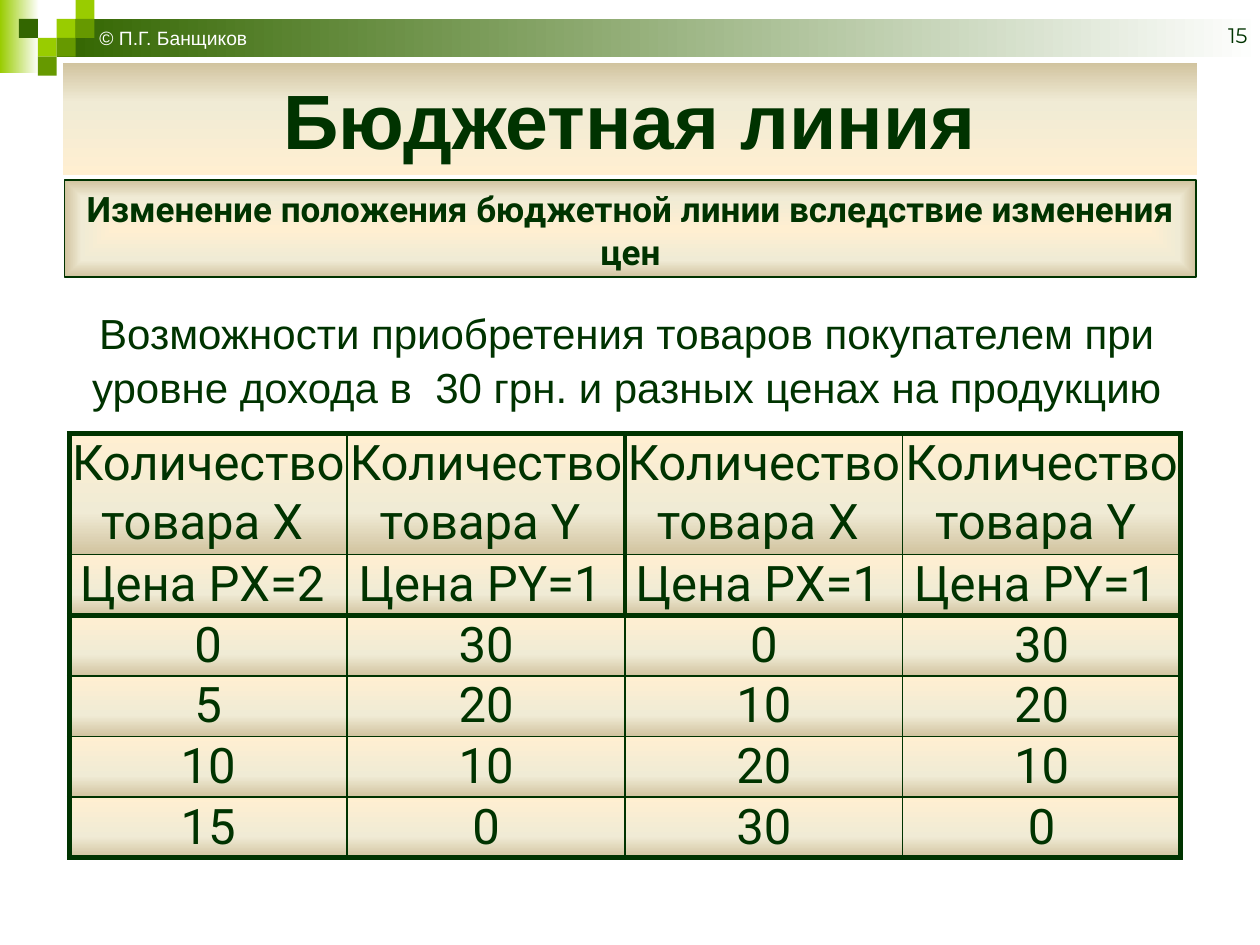
from dataclasses import dataclass, field
from typing import Any, NamedTuple

from lxml import etree
from pptx import Presentation
from pptx.dml.color import RGBColor
from pptx.enum.shapes import MSO_SHAPE
from pptx.enum.text import MSO_ANCHOR, PP_ALIGN
from pptx.oxml.ns import qn
from pptx.util import Pt

RECT = MSO_SHAPE.RECTANGLE
TOP, MID, LOW = MSO_ANCHOR.TOP, MSO_ANCHOR.MIDDLE, MSO_ANCHOR.BOTTOM
LEFT, MIDST, RIGHT = PP_ALIGN.LEFT, PP_ALIGN.CENTER, PP_ALIGN.RIGHT


class Theme:
    ink = "003300"
    white = "FFFFFF"
    lime = "99CC00"
    leaf = "669900"
    moss = "336600"
    sand = ((0, "FFEFD1"), (65, "F0EBD5"), (100, "D1C39F"))
    arial = "Arial"
    robot = "Roboto"
    mont = "Montserrat"
    title = 44
    grid = 28
    body = 24
    sub = 20
    page = 12
    note = 11
    thin = 1
    thick = 3


class Box(NamedTuple):
    left: float
    top: float
    width: float
    height: float

    def size(self) -> list[Pt]:
        return [Pt(v) for v in self]


class Grad(NamedTuple):
    stops: tuple
    angle: int | None = None


@dataclass
class Block:
    box: Box
    fill: Any
    line: bool = False


@dataclass
class Label:
    text: str
    size: float
    face: str = Theme.arial
    color: str = Theme.ink
    bold: bool = False
    align: Any = MIDST
    lead: float = 1
    frame: dict = field(default_factory=dict)


BARE = {f"margin_{s}": 0 for s in ("left", "right", "top", "bottom")}
TILE = 10.8
TILES = (
    (3, 1, Theme.lime), (4, 0, Theme.lime), (4, 1, Theme.leaf),
    (2, 2, Theme.lime), (1, 1, Theme.moss), (3, 2, Theme.leaf),
    (2, 3, Theme.leaf),
)
DECOR = [
    Block(Box(0, 0, 22.3, 41.8), Grad(((0, Theme.lime), (100, Theme.white)), 0)),
    Block(Box(32.4, 10.8, 687.6, 21.6), Grad(((0, Theme.moss), (100, Theme.white)), 0)),
] + [Block(Box(c * TILE, r * TILE, TILE, TILE), fill) for c, r, fill in TILES]

NOTES = (
    (Box(675.4, 11.5, 44.6, 19.4),
     Label("15", Theme.page, Theme.mont, align=RIGHT, frame={"vertical_anchor": LOW})),
    (Box(49.7, 11.5, 106.6, 20.9),
     Label("© П.Г. Банщиков", Theme.note, color=Theme.white, align=LEFT)),
    (Box(15.1, 174.2, 686.2, 59),
     Label("Возможности приобретения товаров покупателем при уровне дохода в  30 грн. "
           "и разных ценах на продукцию", Theme.body, lead=1.06, frame=BARE)),
)
SUB = Block(Box(36.9, 103, 646.6, 55.4), Grad(Theme.sand), True)
SUBTEXT = Label("Изменение положения бюджетной линии вследствие изменения цен",
                Theme.sub, Theme.robot, bold=True, lead=1.03)
HEAD = Block(Box(36, 36, 648, 64), Grad(Theme.sand, 270))
HEADTEXT = Label("Бюджетная линия", Theme.title, bold=True,
                 frame={"vertical_anchor": MID})

TABLE = Box(39.6, 247.7, 635, 238)
TALL, SHORT = 68, 34
ROWS = (
    ("Количество товара X ", "Количество товара Y ") * 2,
    ("Цена РX=2 ", "Цена РY=1 ", "Цена РX=1 ", "Цена РY=1 "),
    ("0", "30", "0", "30"),
    ("5", "20", "10", "20"),
    ("10", "10", "20", "10"),
    ("15", "0", "30", "0"),
)


def apply(item: Any, vals: dict) -> None:
    for name, val in vals.items():
        setattr(item, name, val)


def node(tag: str, up: Any = None, **attrs: Any) -> Any:
    vals = {k: str(v) for k, v in attrs.items()}
    if up is None:
        return etree.Element(qn(tag), vals)
    return etree.SubElement(up, qn(tag), vals)


def paint(grad: Grad) -> Any:
    root = node("a:gradFill", rotWithShape=1)
    stops = node("a:gsLst", root)
    for pos, color in grad.stops:
        node("a:srgbClr", node("a:gs", stops, pos=pos * 1000), val=color)
    if grad.angle is None:
        mid = {side: 50000 for side in "ltrb"}
        node("a:fillToRect", node("a:path", root, path="rect"), **mid)
    else:
        node("a:lin", root, ang=grad.angle * 60000, scaled=0)
    return root


def write(frame: Any, label: Label) -> None:
    apply(frame, {"word_wrap": True, "vertical_anchor": TOP, **label.frame})
    para = frame.paragraphs[0]
    apply(para, {"alignment": label.align, "line_spacing": label.lead})
    run = para.add_run()
    run.text = label.text
    apply(run.font, {"size": Pt(label.size), "name": label.face, "bold": label.bold})
    run.font.color.rgb = RGBColor.from_string(label.color)


def draw(slide: Any, block: Block) -> Any:
    shape = slide.shapes.add_shape(RECT, *block.box.size())
    shape.shadow.inherit = False
    if isinstance(block.fill, Grad):
        shape.element.spPr.insert(2, paint(block.fill))
    else:
        shape.fill.solid()
        shape.fill.fore_color.rgb = RGBColor.from_string(block.fill)
    if block.line:
        shape.line.color.rgb = RGBColor.from_string(Theme.ink)
        shape.line.width = Pt(Theme.thin)
    else:
        shape.line.fill.background()
    return shape


def edge(props: Any, side: str, heavy: bool) -> None:
    width = Pt(Theme.thick if heavy else Theme.thin)
    line = node(f"a:ln{side}", props, w=int(width))
    node("a:srgbClr", node("a:solidFill", line), val=Theme.ink)


def style(cell: Any, row: int, col: int) -> None:
    apply(cell, BARE)
    props = cell._tc.get_or_add_tcPr()
    for side, pos in (("L", col), ("R", col + 1)):
        edge(props, side, pos in (0, 4) or (pos == 2 and row < 2))
    for side, pos in (("T", row), ("B", row + 1)):
        edge(props, side, pos in (0, 2, len(ROWS)))
    props.append(paint(Grad(Theme.sand, 90)))


def grid(slide: Any) -> None:
    cols = len(ROWS[0])
    table = slide.shapes.add_table(len(ROWS), cols, *TABLE.size()).table
    apply(table, {"first_row": False, "horz_banding": False})
    for col in table.columns:
        col.width = Pt(TABLE.width / cols)
    for r, texts in enumerate(ROWS):
        table.rows[r].height = Pt(SHORT if r else TALL)
        for c, text in enumerate(texts):
            cell = table.cell(r, c)
            style(cell, r, c)
            write(cell.text_frame, Label(text, Theme.grid, Theme.robot, lead=1.03))


def main() -> None:
    deck = Presentation()
    apply(deck, {"slide_width": Pt(720), "slide_height": Pt(540)})
    slide = deck.slides.add_slide(deck.slide_layouts[6])
    for block in DECOR:
        draw(slide, block)
    for box, label in NOTES:
        write(slide.shapes.add_textbox(*box.size()).text_frame, label)
    grid(slide)
    for block, label in ((SUB, SUBTEXT), (HEAD, HEADTEXT)):
        write(draw(slide, block).text_frame, label)
    deck.save("out.pptx")


if __name__ == "__main__":
    main()
